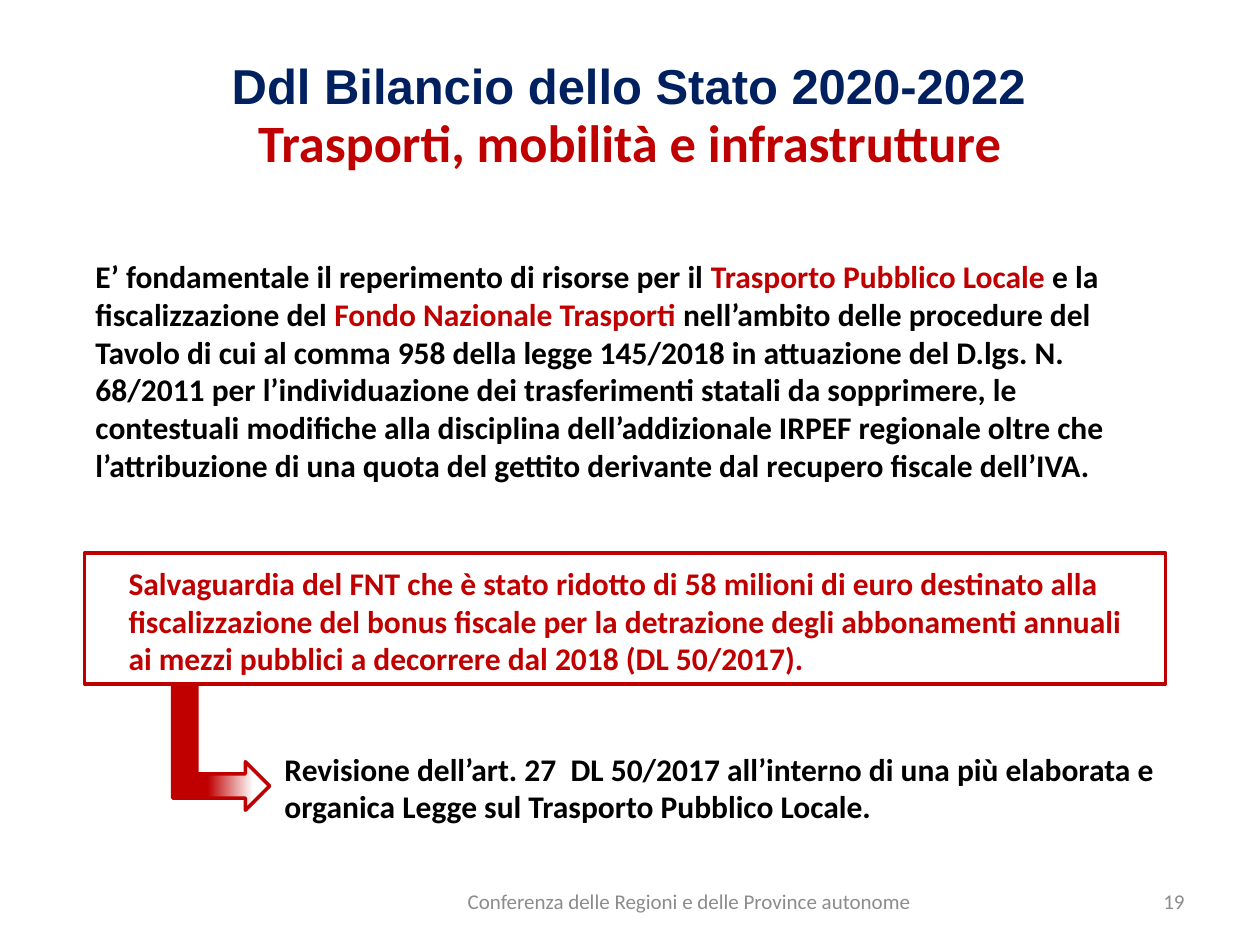
from copy import deepcopy

from pptx import Presentation
from pptx.dml.color import RGBColor
from pptx.enum import shapes, text
from pptx.util import Inches, Pt

RED = RGBColor(0xC0, 0x00, 0x00)
NAVY = RGBColor(0x00, 0x20, 0x60)
BLACK = RGBColor(0x00, 0x00, 0x00)
WHITE = RGBColor(0xFF, 0xFF, 0xFF)
GREY = RGBColor(0x8C, 0x8C, 0x8C)

LEFT, CENTER, RIGHT = text.PP_ALIGN.LEFT, text.PP_ALIGN.CENTER, text.PP_ALIGN.RIGHT
TOP, MIDDLE = text.MSO_ANCHOR.TOP, text.MSO_ANCHOR.MIDDLE


def write(sp, parts, size=18, bold=True, font="Calibri", align=LEFT, anchor=TOP):
    """Fill a shape with one paragraph made of (wording, colour) parts."""
    tf = sp.text_frame
    tf.word_wrap = True
    tf.vertical_anchor = anchor
    p = tf.paragraphs[0]
    p.alignment = align
    for wording, color in parts:
        r = p.add_run()
        r.text = wording
        r.font.name = font
        r.font.size = Pt(size)
        r.font.bold = bold
        r.font.color.rgb = color


def add_text(slide, box, parts, **style):
    sp = slide.shapes.add_textbox(*map(Inches, box))
    write(sp, parts, **style)


def add_outlined(slide, kind, box):
    sp = slide.shapes.add_shape(kind, *map(Inches, box))
    sp.shadow.inherit = False
    sp.line.color.rgb = RED
    sp.line.width = Pt(2)
    return sp


def add_bent_arrow(slide, box):
    sp = add_outlined(slide, shapes.MSO_SHAPE.BENT_UP_ARROW, box)
    sp.rotation = 90
    fill = sp.fill
    fill.gradient()
    fill.gradient_angle = 90
    # A third stop keeps the stem solid red before the fade
    first = fill.gradient_stops[0]._gs
    first.addnext(deepcopy(first))
    stops = [(0, RED), (0.36, RED), (0.83, WHITE)]
    for stop, (position, color) in zip(fill.gradient_stops, stops):
        stop.position = position
        stop.color.rgb = color


def add_callout(slide, box, parts):
    sp = add_outlined(slide, shapes.MSO_SHAPE.RECTANGLE, box)
    sp.fill.solid()
    sp.fill.fore_color.rgb = WHITE
    tf = sp.text_frame
    tf.margin_left, tf.margin_top = Inches(0.35), Inches(0.08)
    tf.margin_right, tf.margin_bottom = Inches(0.16), Inches(0.05)
    write(sp, parts, anchor=MIDDLE)


def main():
    prs = Presentation()
    prs.slide_width, prs.slide_height = Inches(10), Inches(7.5)
    slide = prs.slides.add_slide(prs.slide_layouts[6])

    # Arrow from the callout to its consequence
    add_bent_arrow(slide, (1.11, 5.4, 1.29, 0.77))

    # Body text
    add_text(slide, (0.66, 1.99, 8.66, 1.92), [
        ("E’ fondamentale il reperimento di risorse per il ", BLACK),
        ("Trasporto Pubblico Locale ", RED),
        ("e la fiscalizzazione del ", BLACK),
        ("Fondo Nazionale Trasporti ", RED),
        ("nell’ambito delle procedure del Tavolo di cui al comma 958 della "
         "legge 145/2018 in attuazione del D.lgs. N. 68/2011 per "
         "l’individuazione dei trasferimenti statali da sopprimere, le "
         "contestuali modifiche alla disciplina dell’addizionale IRPEF "
         "regionale oltre che l’attribuzione di una quota del gettito "
         "derivante dal recupero fiscale dell’IVA.", BLACK),
    ])
    add_text(slide, (2.16, 5.9, 7.16, 0.71), [
        ("Revisione dell’art. 27  DL 50/2017 all’interno di una più elaborata "
         "e organica Legge sul Trasporto Pubblico Locale.", BLACK),
    ])

    # Footer and slide number
    footer = dict(size=12, bold=False, anchor=MIDDLE)
    add_text(slide, (3.42, 6.95, 4.1, 0.4),
             [("Conferenza delle Regioni e delle Province autonome", GREY)],
             align=CENTER, **footer)
    add_text(slide, (7.17, 6.95, 2.33, 0.4), [("19", GREY)], align=RIGHT, **footer)

    # Headings
    add_text(slide, (0, 0.82, 10, 0.61),
             [("Trasporti, mobilità e infrastrutture", RED)], size=30, align=CENTER)
    add_text(slide, (0.49, 0.39, 9, 0.52),
             [("Ddl Bilancio dello Stato 2020-2022", NAVY)],
             size=28, font="Arial", align=CENTER)

    # Framed callout
    add_callout(slide, (0.67, 4.39, 8.58, 1.04), [
        ("Salvaguardia del FNT che è stato ridotto di 58 milioni di euro "
         "destinato alla fiscalizzazione del bonus fiscale per la detrazione "
         "degli abbonamenti annuali ai mezzi pubblici a decorrere dal 2018 "
         "(DL 50/2017).", RED),
    ])

    prs.save("out.pptx")


if __name__ == "__main__":
    main()
